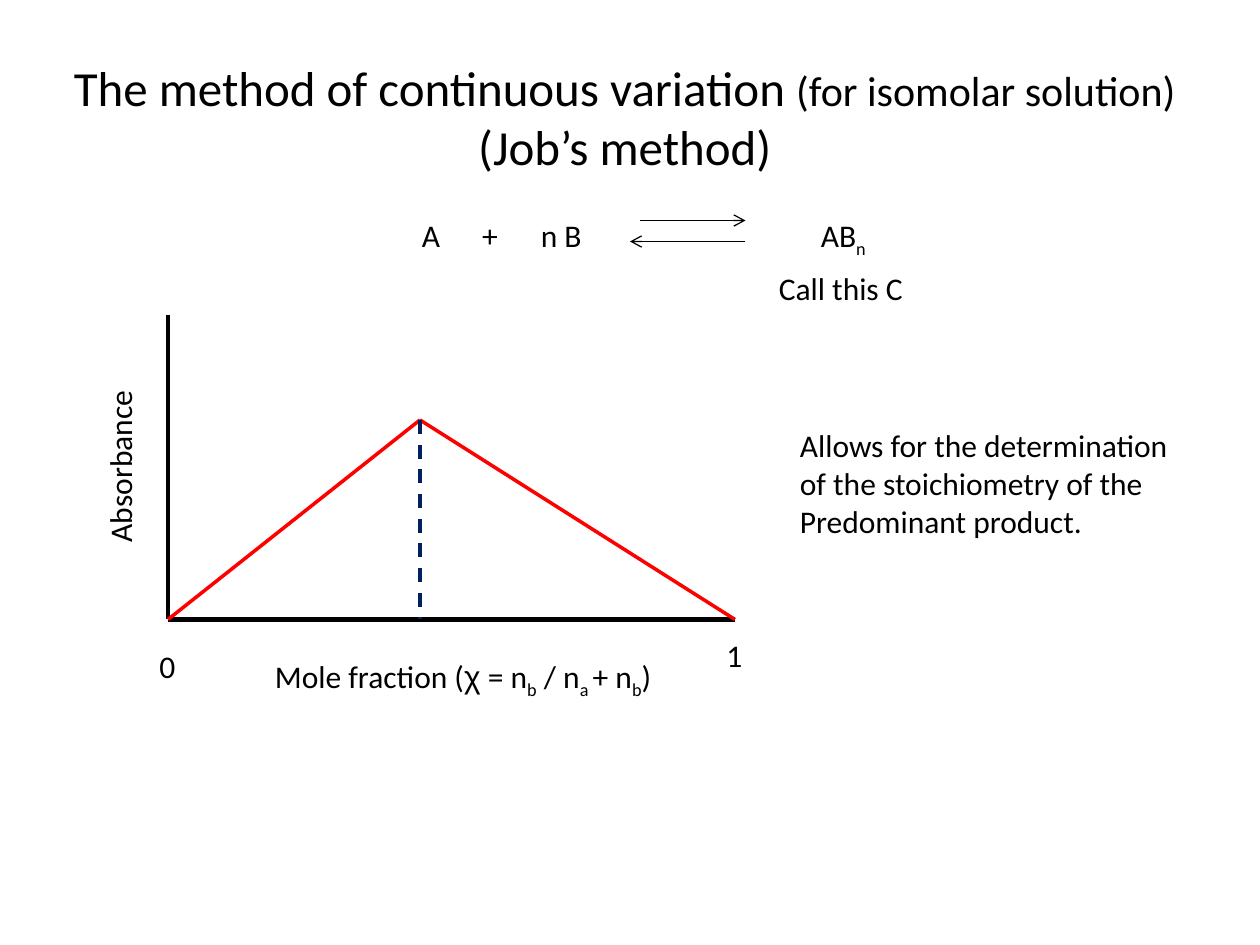
"""Build a slide explaining the method of continuous variation."""
from lxml.etree import SubElement
from pptx import Presentation
from pptx.dml.color import RGBColor
from pptx.enum.dml import MSO_LINE
from pptx.enum.shapes import MSO_CONNECTOR
from pptx.enum.text import MSO_ANCHOR, PP_ALIGN
from pptx.oxml.ns import qn
from pptx.util import Pt

BLACK = RGBColor(0, 0, 0)
RED = RGBColor(255, 0, 0)
NAVY = RGBColor(0, 32, 96)
BODY_SIZE = 18
SUBSCRIPT = "-25000"

TITLE_BOX = (18, 21.6, 678, 90)
TITLE_LINES = [
    [("The method of continuous variation ", 28), ("(for isomolar solution)", 24)],
    [("(Job’s method)", 28)],
]

EQUATION_TABS = (34.5, 68)
LABELS = {
    "reactants": ((234, 120, 124.6, 29), [["A\t+\tn B"]]),
    "product": ((462, 120, 41, 29), [["AB", ("n", "sub")]]),
    "product name": ((438, 150, 86.4, 29), [["Call this C"]]),
    "vertical axis": ((54, 222, 36, 95), [["Absorbance"]]),
    "horizontal axis": (
        (150, 372, 234, 29),
        [["Mole fraction (", ("χ", "greek"), " = n", ("b", "sub"), " / n",
          ("a ", "sub"), "+ n", ("b", "sub"), ")"]],
    ),
    "axis start": ((84, 366, 24, 29), [["0"]]),
    "axis end": ((408, 360, 24, 29), [["1"]]),
    "purpose": (
        (450, 240, 226.8, 72.7),
        [["Allows for the determination"], ["of the stoichiometry of the"],
         ["Predominant product."]],
    ),
}

ORIGIN, AXIS_TOP, AXIS_END = (96, 354), (96, 180), (420, 354)
PEAK, PEAK_FOOT = (240, 240), (240, 354)
ARROWS = [((366, 126), (426, 126)), ((426, 138), (360, 138))]
AXES = [(AXIS_TOP, ORIGIN), (ORIGIN, AXIS_END)]
CURVE = [(ORIGIN, PEAK), (PEAK, AXIS_END)]


def add_box(slide, box, wrap=False):
    shape = slide.shapes.add_textbox(*(Pt(value) for value in box))
    shape.text_frame.word_wrap = wrap
    return shape.text_frame


def add_run(paragraph, text, size=BODY_SIZE, style=None):
    run = paragraph.add_run()
    run.text = text
    run.font.size = Pt(size)
    run.font.name = "Arial" if style == "greek" else "Calibri"
    run.font.color.rgb = BLACK
    if style == "sub":
        run.font._element.set("baseline", SUBSCRIPT)


def add_title(slide):
    frame = add_box(slide, TITLE_BOX, wrap=True)
    frame.vertical_anchor = MSO_ANCHOR.MIDDLE
    paragraph = frame.paragraphs[0]
    paragraph.alignment = PP_ALIGN.CENTER
    for index, line in enumerate(TITLE_LINES):
        if index:
            paragraph.add_line_break()
        for text, size in line:
            add_run(paragraph, text, size)


def add_label(slide, box, lines):
    frame = add_box(slide, box)
    for index, line in enumerate(lines):
        paragraph = frame.add_paragraph() if index else frame.paragraphs[0]
        for part in line:
            text, style = (part, None) if isinstance(part, str) else part
            add_run(paragraph, text, style=style)
    return frame


def set_tabs(paragraph, positions):
    tab_list = SubElement(paragraph._p.get_or_add_pPr(), qn("a:tabLst"))
    for position in positions:
        SubElement(tab_list, qn("a:tab"), pos=str(int(Pt(position))), algn="l")


def add_line(slide, start, end, color, width, dashed=False, arrow=False):
    points = (Pt(value) for value in start + end)
    connector = slide.shapes.add_connector(MSO_CONNECTOR.STRAIGHT, *points)
    connector.line.color.rgb = color
    connector.line.width = Pt(width)
    if dashed:
        connector.line.dash_style = MSO_LINE.DASH
    if arrow:
        SubElement(connector.line._get_or_add_ln(), qn("a:tailEnd"), type="arrow")
    SubElement(connector._element.spPr, qn("a:effectLst"))


def main():
    presentation = Presentation()
    presentation.slide_width, presentation.slide_height = Pt(720), Pt(540)
    slide = presentation.slides.add_slide(presentation.slide_layouts[6])
    add_title(slide)
    frames = {name: add_label(slide, *label) for name, label in LABELS.items()}
    set_tabs(frames["reactants"].paragraphs[0], EQUATION_TABS)
    frames["vertical axis"]._txBody.bodyPr.set("vert", "vert270")
    for start, end in ARROWS:
        add_line(slide, start, end, BLACK, 0.75, arrow=True)
    for start, end in AXES:
        add_line(slide, start, end, BLACK, 2.5)
    for start, end in CURVE:
        add_line(slide, start, end, RED, 2)
    add_line(slide, PEAK, PEAK_FOOT, NAVY, 2, dashed=True)
    presentation.save("out.pptx")


if __name__ == "__main__":
    main()
